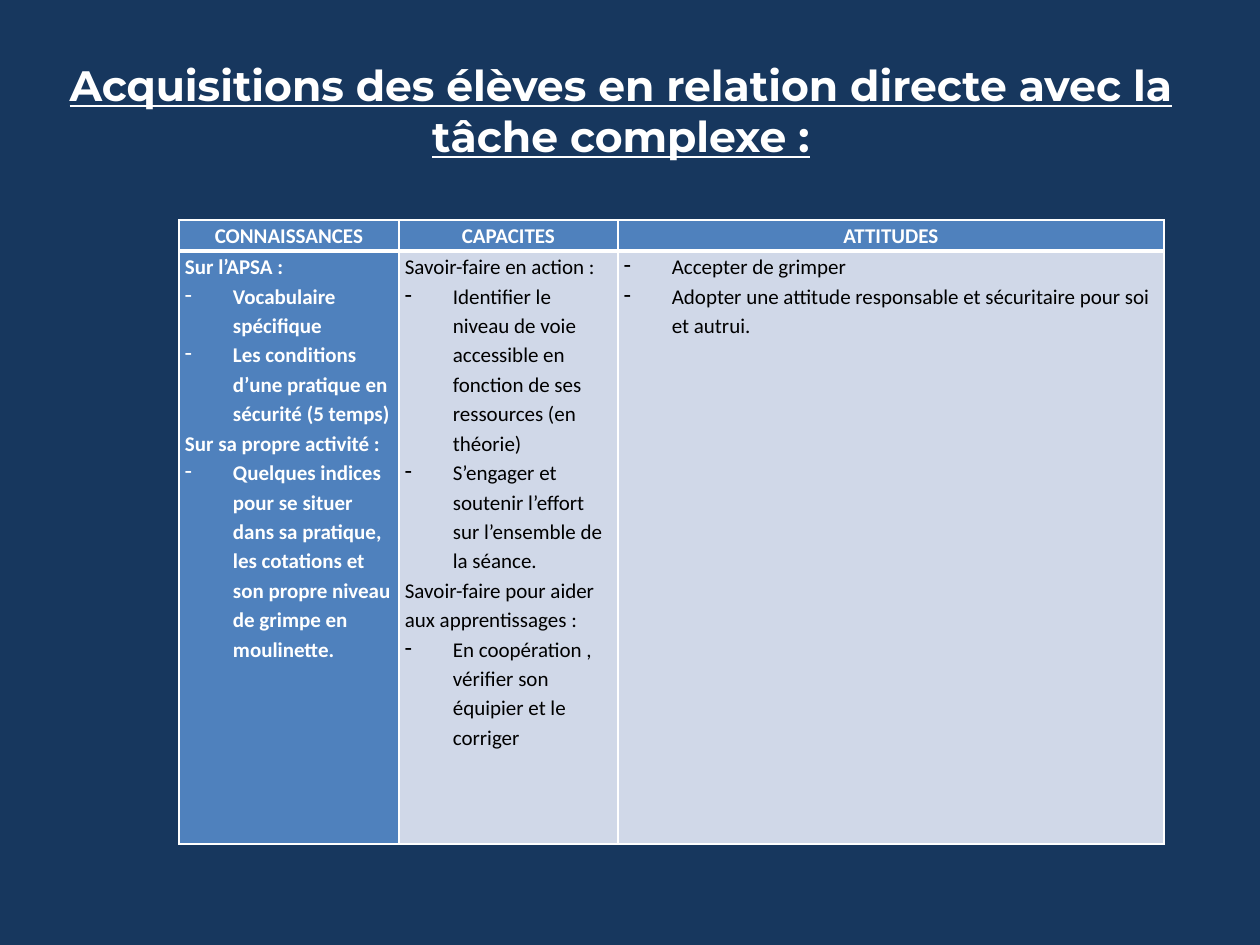
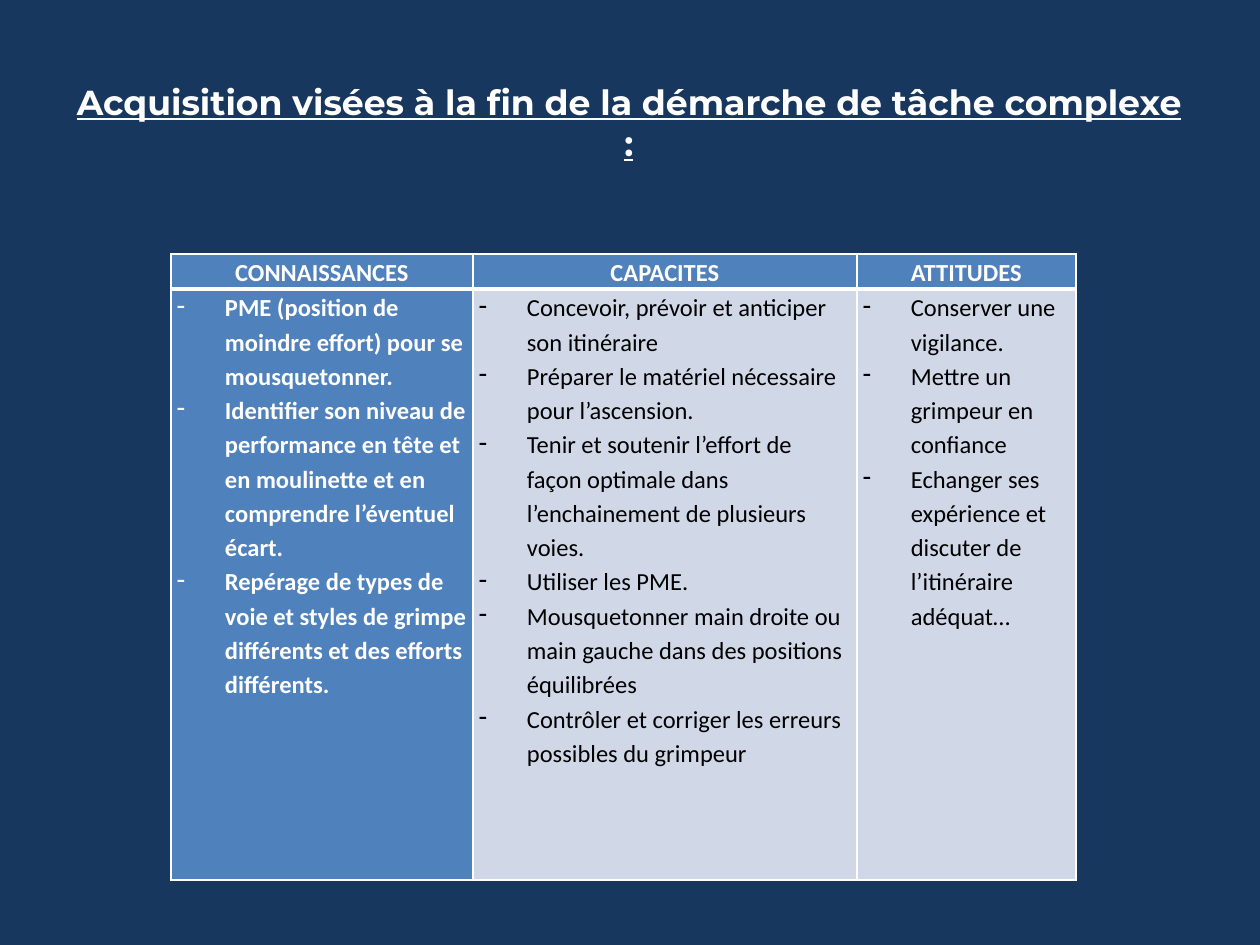
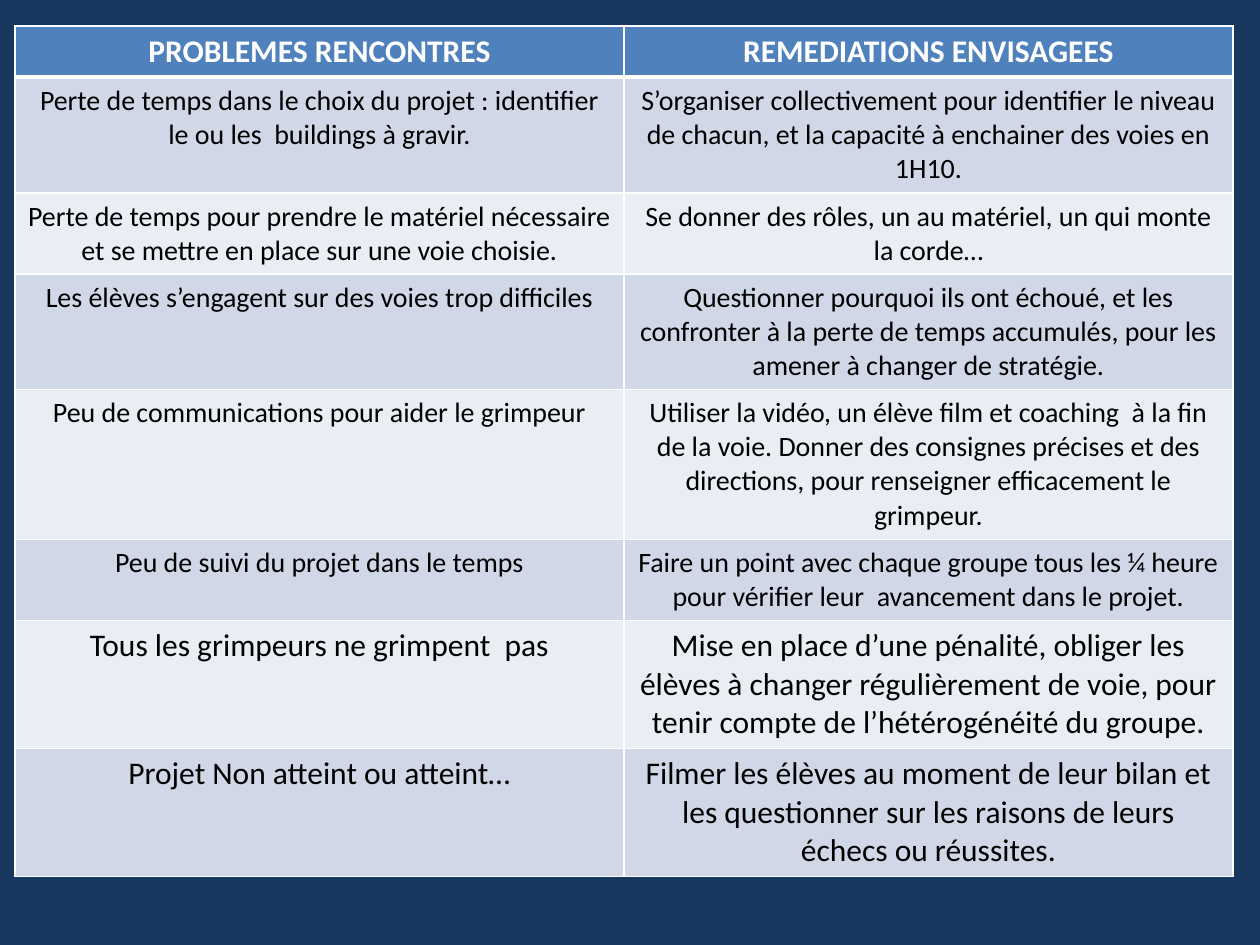
"""Build three slides on climbing lessons: two skill grids and a table of problems and remedies."""
import pptx
import pptx.dml.color
import pptx.enum.text
import pptx.oxml
import pptx.oxml.ns
import pptx.util

SCALE = 914400 / 126
NAVY, BLUE, PALE, LIGHT = "17375E", "4F81BD", "D0D8E8", "E9EDF4"
WHITE, BLACK = "FFFFFF", "000000"
MID = pptx.enum.text.PP_ALIGN.CENTER
LEFT = pptx.enum.text.PP_ALIGN.LEFT


def paint(fill, hue):
    fill.solid()
    fill.fore_color.rgb = pptx.dml.color.RGBColor.from_string(hue)


def write(frame, text, size, hue=WHITE, bold=False, line=False, font="Calibri", align=MID, space=1):
    for i, item in enumerate(text.split("\n")):
        para = frame.paragraphs[0] if i == 0 else frame.add_paragraph()
        para.alignment = align
        para.line_spacing = space
        if item.startswith("- "):
            item = item[2:]
            props = para._p.get_or_add_pPr()
            props.set("marL", str(px(48)))
            props.set("indent", str(px(-48)))
            props.append(pptx.oxml.parse_xml(f'<a:buChar {pptx.oxml.ns.nsdecls("a")} char="-"/>'))
        run = para.add_run()
        run.text = item
        run.font.name, run.font.size = font, pptx.util.Pt(size)
        run.font.bold, run.font.underline = bold, line
        paint(run.font.fill, hue)


def px(count):
    return round(count * SCALE)


grids = [
    dict(
        title="Acquisitions des élèves en relation directe avec la tâche complexe :",
        place=(54, 70), size=24.3, left=179, top=220, cols=(220, 219, 546), rows=(31, 593), text=12,
        cells=[
            "Sur l’APSA :\n- Vocabulaire spécifique\n"
            "- Les conditions d’une pratique en sécurité (5 temps)\n"
            "Sur sa propre activité :\n"
            "- Quelques indices pour se situer dans sa pratique, les cotations "
            "et son propre niveau de grimpe en moulinette.",
            "Savoir-faire en action :\n"
            "- Identifier le niveau de voie accessible en fonction de ses ressources (en théorie)\n"
            "- S’engager et soutenir l’effort sur l’ensemble de la séance.\n"
            "Savoir-faire pour aider aux apprentissages :\n"
            "- En coopération , vérifier son équipier et le corriger",
            "- Accepter de grimper\n"
            "- Adopter une attitude responsable et sécuritaire pour soi et autrui.",
        ],
    ),
    dict(
        title="Acquisition visées à la fin de la démarche de tâche complexe :",
        place=(62, 82), size=19.8, left=171, top=254, cols=(302, 384, 219), rows=(35, 591), text=14,
        cells=[
            "- PME (position de moindre effort) pour se mousquetonner.\n"
            "- Identifier son niveau de performance en tête et en moulinette "
            "et en comprendre l’éventuel écart.\n"
            "- Repérage de types de voie et styles de grimpe différents et des efforts différents.",
            "- Concevoir, prévoir et anticiper son itinéraire\n"
            "- Préparer le matériel nécessaire pour l’ascension.\n"
            "- Tenir et soutenir l’effort de façon optimale dans l’enchainement de plusieurs voies.\n"
            "- Utiliser les PME.\n"
            "- Mousquetonner main droite ou main gauche dans des positions équilibrées\n"
            "- Contrôler et corriger les erreurs possibles du grimpeur",
            "- Conserver une vigilance.\n- Mettre un grimpeur en confiance\n"
            "- Echanger ses expérience et discuter de l’itinéraire adéquat…",
        ],
    ),
    dict(
        title=None, left=15, top=26, cols=(609, 609), rows=(51, 116, 81, 115, 150, 81, 128, 128),
        cells=[
            "Perte de temps dans le choix du projet : identifier le ou les  buildings à gravir.",
            "S’organiser collectivement pour identifier le niveau de chacun, "
            "et la capacité à enchainer des voies en 1H10.",
            "Perte de temps pour prendre le matériel nécessaire et se mettre en place sur une voie choisie.",
            "Se donner des rôles, un au matériel, un qui monte la corde…",
            "Les élèves s’engagent sur des voies trop difficiles",
            "Questionner pourquoi ils ont échoué, et les confronter à la perte de temps accumulés, "
            "pour les amener à changer de stratégie.",
            "Peu de communications pour aider le grimpeur",
            "Utiliser la vidéo, un élève film et coaching  à la fin de la voie. Donner des consignes "
            "précises et des directions, pour renseigner efficacement le grimpeur.",
            "Peu de suivi du projet dans le temps",
            "Faire un point avec chaque groupe tous les ¼ heure pour vérifier leur  avancement dans le projet.",
            "Tous les grimpeurs ne grimpent  pas",
            "Mise en place d’une pénalité, obliger les élèves à changer régulièrement de voie, "
            "pour tenir compte de l’hétérogénéité du groupe.",
            "Projet Non atteint ou atteint…",
            "Filmer les élèves au moment de leur bilan et les questionner sur les raisons "
            "de leurs échecs ou réussites.",
        ],
    ),
]

deck = pptx.Presentation()
deck.slide_width, deck.slide_height = px(1260), px(945)
paint(deck.slide_master.background.fill, NAVY)

for grid in grids:
    skills = grid["title"] is not None
    slide = deck.slides.add_slide(deck.slide_layouts[5 if skills else 6])
    if skills:
        title = slide.shapes.title
        title.left, title.top = map(px, grid["place"])
        title.width, title.height = px(1134), px(158)
        frame = title.text_frame
        frame.auto_size = pptx.enum.text.MSO_AUTO_SIZE.NONE
        frame.vertical_anchor = pptx.enum.text.MSO_ANCHOR.MIDDLE
        frame.margin_bottom = px(84)
        write(frame, grid["title"], grid["size"], bold=True, line=True, font="Montserrat")

    cols, rows = grid["cols"], grid["rows"]
    heads = ["CONNAISSANCES", "CAPACITES", "ATTITUDES"] if skills else ["PROBLEMES RENCONTRES", "REMEDIATIONS ENVISAGEES"]
    table = slide.shapes.add_table(
        len(rows), len(cols), px(grid["left"]), px(grid["top"]), px(sum(cols)), px(sum(rows))
    ).table
    table.horz_banding = False
    for col, width in zip(table.columns, cols):
        col.width = px(width)
    for row, height in zip(table.rows, rows):
        row.height = px(height)

    for i, (cell, text) in enumerate(zip(table.iter_cells(), heads + grid["cells"])):
        row, col = divmod(i, len(cols))
        head = row == 0
        strong = head or (skills and col == 0)
        props = cell._tc.get_or_add_tcPr()
        for side in "LRTB":
            thick = (row, side) in ((0, "B"), (1, "T"))
            props.append(pptx.oxml.parse_xml(
                f'<a:ln{side} {pptx.oxml.ns.nsdecls("a")} w="{pptx.util.Pt(3 if thick else 1)}">'
                f'<a:solidFill><a:srgbClr val="{WHITE}"/></a:solidFill></a:ln{side}>'
            ))
        paint(cell.fill, BLUE if strong else PALE if row % 2 else LIGHT)
        if skills:
            cell.margin_left = cell.margin_right = px(6)
            cell.margin_top = cell.margin_bottom = 0
            size = grid["text"]
        else:
            size = 18 if head or row > 5 else 16
        write(
            cell.text_frame, text, size, hue=WHITE if strong else BLACK, bold=strong,
            align=LEFT if skills and not head else MID, space=1.15 if skills else 1,
        )

deck.save("out.pptx")
